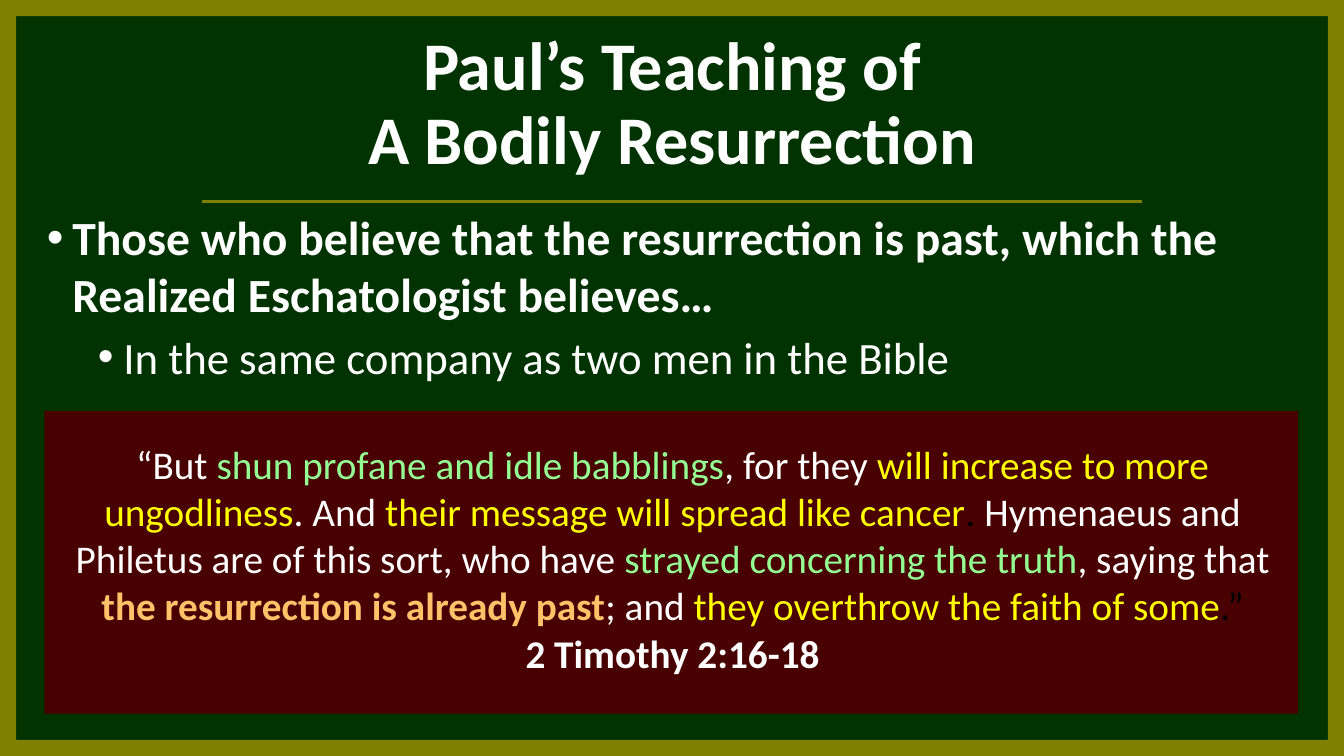
from dataclasses import dataclass

from lxml.etree import SubElement
from pptx import Presentation
from pptx.dml.color import RGBColor as RGB
from pptx.enum.shapes import MSO_CONNECTOR, MSO_SHAPE
from pptx.enum.text import MSO_ANCHOR as Anchor, MSO_AUTO_SIZE as AutoSize, PP_ALIGN as Align
from pptx.oxml.ns import qn
from pptx.util import Inches, Pt


@dataclass(frozen=True)
class Theme:
    font: str = "Calibri"
    green: str = "003300"
    olive: str = "808000"
    maroon: str = "480000"
    white: str = "FFFFFF"
    black: str = "000000"
    mint: str = "93FF93"
    yellow: str = "FFFF00"
    orange: str = "FFC269"
    title: float = 36.5
    point: float = 25.5
    subpoint: float = 24
    verse: float = 21


@dataclass(frozen=True)
class Box:
    """Lengths in inches."""
    left: float
    top: float
    width: float
    height: float

    def emu(self) -> tuple:
        return tuple(Inches(v) for v in (self.left, self.top, self.width, self.height))


@dataclass(frozen=True)
class Bullet:
    text: str
    size: float
    indent: float
    before: float = 0
    bold: bool = False
    level: int = 0


@dataclass(frozen=True)
class Phrase:
    text: str
    color: str
    bold: bool = False


T = Theme()
W = 10
H = W * 9 / 16
EDGE = 0.12  # frame thickness
HANG = 0.19  # bullet hanging indent

BULLETS = [
    Bullet("Those who believe that the resurrection is past, which the "
           "Realized Eschatologist believes…", T.point, HANG, bold=True),
    Bullet("In the same company as two men in the Bible", T.subpoint, 3 * HANG,
           before=3.8, level=1),
]
VERSE = [
    Phrase("“But ", T.white),
    Phrase("shun profane and idle babblings", T.mint),
    Phrase(", for they ", T.white),
    Phrase("will increase to more ungodliness", T.yellow),
    Phrase(". And ", T.white),
    Phrase("their message will spread like cancer", T.yellow),
    Phrase(". ", T.black),
    Phrase("Hymenaeus and Philetus are of this sort, who have ", T.white),
    Phrase("strayed concerning the truth", T.mint),
    Phrase(", saying that ", T.white),
    Phrase("the resurrection is already past", T.orange, True),
    Phrase("; and ", T.white),
    Phrase("they overthrow the faith of some", T.yellow),
    Phrase(".”", T.black),
]
REFERENCE = Phrase("2 Timothy 2:16-18", T.white, True)


def style(r, size: float, color: str = T.white, bold: bool = False) -> None:
    r.font.name, r.font.size, r.font.bold = T.font, Pt(size), bold
    r.font.color.rgb = RGB.from_string(color)


def add_panel(slide, box: Box, color: str) -> None:
    sp = slide.shapes.add_shape(MSO_SHAPE.RECTANGLE, *box.emu())
    sp.shadow.inherit = False
    sp.fill.solid()
    sp.fill.fore_color.rgb = RGB.from_string(color)
    sp.line.fill.background()


def add_rule(slide, left: float, right: float, y: float) -> None:
    line = slide.shapes.add_connector(MSO_CONNECTOR.STRAIGHT, Inches(left), Inches(y),
                                      Inches(right), Inches(y))
    line.line.color.rgb = RGB.from_string(T.olive)
    line.line.width = Pt(2)
    SubElement(line._element.spPr, qn("a:effectLst"))


def add_text_frame(slide, box: Box):
    tf = slide.shapes.add_textbox(*box.emu()).text_frame
    tf.word_wrap = True
    return tf


def add_bullets(slide, box: Box, bullets: list[Bullet]) -> None:
    tf = add_text_frame(slide, box)
    for i, b in enumerate(bullets):
        p = tf.add_paragraph() if i else tf.paragraphs[0]
        p.text, p.level = b.text, b.level
        pPr = p._p.get_or_add_pPr()
        pPr.set("marL", str(Inches(b.indent)))
        pPr.set("indent", str(-Inches(HANG)))
        SubElement(pPr, qn("a:buFont")).set("typeface", "Arial")
        SubElement(pPr, qn("a:buChar")).set("char", "•")
        p.space_before = Pt(b.before)
        style(p.runs[0], b.size, bold=b.bold)


def add_verse(slide, box: Box, phrases: list[Phrase], reference: Phrase) -> None:
    p = add_text_frame(slide, box).paragraphs[0]
    p.alignment = Align.CENTER
    for phrase in [*phrases, reference]:
        if phrase is reference:
            p.add_line_break()
        r = p.add_run()
        r.text = phrase.text
        style(r, T.verse, phrase.color, phrase.bold)


def set_title(slide, box: Box, text: str) -> None:
    sp = slide.shapes.title
    sp.left, sp.top, sp.width, sp.height = box.emu()
    tf = sp.text_frame
    tf.auto_size, tf.vertical_anchor = AutoSize.NONE, Anchor.MIDDLE
    p = tf.paragraphs[0]
    p.text, p.alignment, p.line_spacing = text, Align.CENTER, 0.9
    for r in p.runs:
        style(r, T.title, bold=True)


def main() -> None:
    prs = Presentation()
    prs.slide_width, prs.slide_height = Inches(W), Inches(H)
    slide = prs.slides.add_slide(prs.slide_layouts[5])
    slide.background.fill.solid()
    slide.background.fill.fore_color.rgb = RGB.from_string(T.green)

    # Heading and points
    set_title(slide, Box(1.44, 0.19, 7.12, 1.19), "Paul’s Teaching of\nA Bodily Resurrection")
    add_bullets(slide, Box(0.25, 1.5, W - 0.5, 1.94), BULLETS)
    add_rule(slide, 0.15 * W, 0.85 * W, 1.5)

    # Scripture panel
    add_panel(slide, Box(0.33, 3.06, 9.33, 2.25), T.maroon)
    add_verse(slide, Box(0.42, 3.23, 9.17, 1.87), VERSE, REFERENCE)

    # Frame around the slide
    for side in (Box(0, 0, EDGE, H), Box(W - EDGE, 0, EDGE, H),
                 Box(0.08, 0, 9.83, EDGE), Box(0, H - EDGE, 9.92, EDGE)):
        add_panel(slide, side, T.olive)

    prs.save("out.pptx")


if __name__ == "__main__":
    main()
